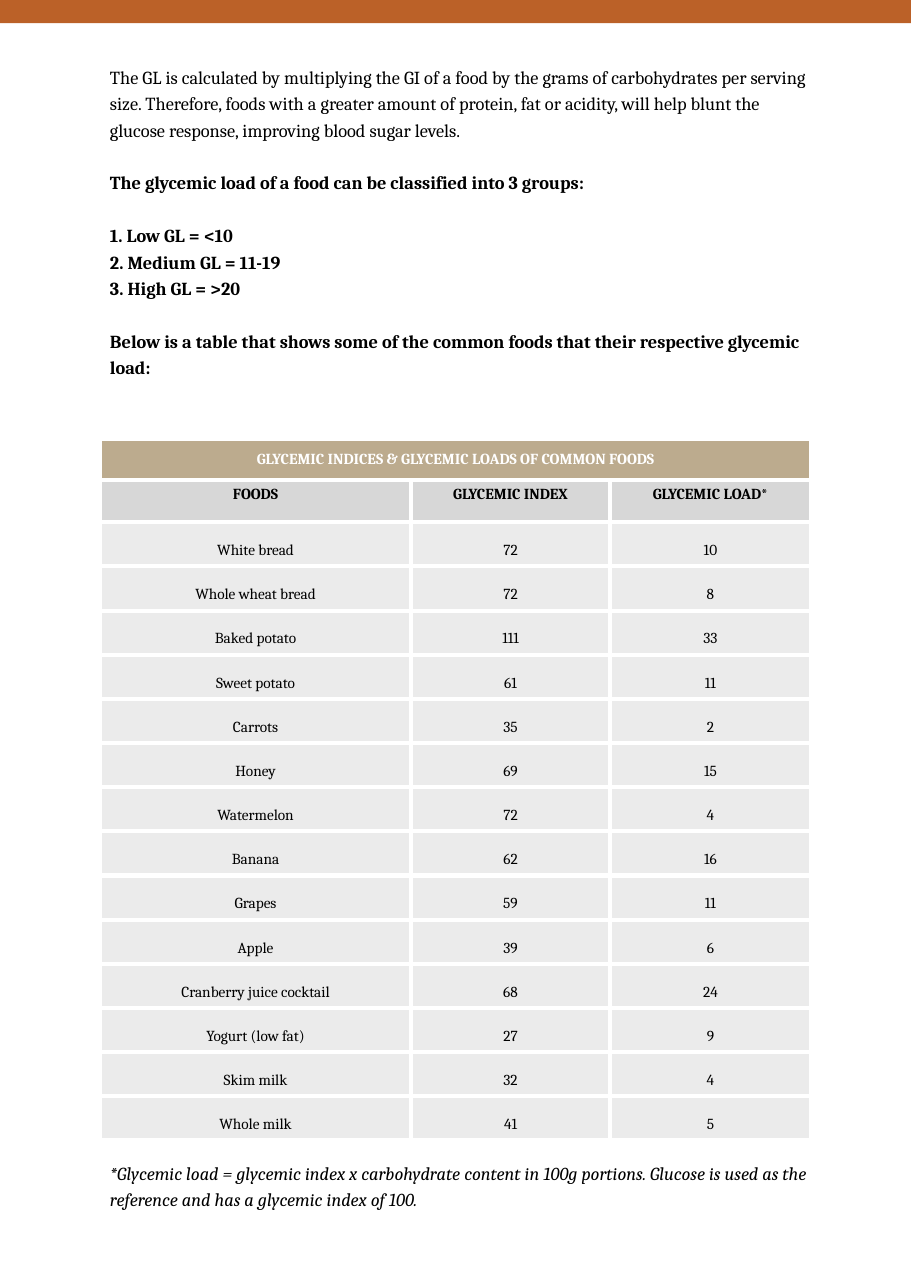
from lxml import etree
from pptx import Presentation
from pptx import util as u
from pptx.dml import color
from pptx.enum import shapes, text
from pptx.oxml import ns

INTRO = [
    ("The GL is calculated by multiplying the GI of a food by the grams of carbohydrates "
     "per serving size. Therefore, foods with a greater amount of protein, fat or acidity, "
     "will help blunt the glucose response, improving blood sugar levels.", False, 0),
    ("The glycemic load of a food can be classified into 3 groups:", True, 17.25),
    ("1. Low GL = <10", True, 17.25),
    ("2. Medium GL = 11-19", True, 0),
    ("3. High GL = >20", True, 0),
    ("Below is a table that shows some of the common foods that their respective "
     "glycemic load:", True, 17.25),
]
FOOTNOTE = ("*Glycemic load = glycemic index x carbohydrate content in 100g portions. "
            "Glucose is used as the reference and has a glycemic index of 100.")
TITLE = "GLYCEMIC INDICES & GLYCEMIC LOADS OF COMMON FOODS"
HEADINGS = ("FOODS", "GLYCEMIC INDEX", "GLYCEMIC LOAD*")
FOODS = [
    ("White bread", 72, 10),
    ("Whole wheat bread", 72, 8),
    ("Baked potato", 111, 33),
    ("Sweet potato", 61, 11),
    ("Carrots", 35, 2),
    ("Honey", 69, 15),
    ("Watermelon", 72, 4),
    ("Banana", 62, 16),
    ("Grapes", 59, 11),
    ("Apple", 39, 6),
    ("Cranberry juice cocktail", 68, 24),
    ("Yogurt (low fat)", 27, 9),
    ("Skim milk", 32, 4),
    ("Whole milk", 41, 5),
]


def rgb(value):
    return color.RGBColor.from_string(value)


class Page:
    """Holds the page style and the slide, and adds each kind of element."""

    font = "Cambria"
    ink = "000000"
    white = "FFFFFF"
    accent = "BB6128"
    title_fill = "BCAB8E"
    heading_fill = "D7D7D7"
    body_fill = "EBEBEB"

    def __init__(self, slide):
        self.slide = slide

    def format_runs(self, paragraph, size, ink, bold=False, italic=False):
        for run in paragraph.runs:
            run.font.name = self.font
            run.font.size = u.Pt(size)
            run.font.bold = bold
            run.font.italic = italic
            run.font.color.rgb = rgb(ink)

    def band(self, left, top, width, height):
        shape = self.slide.shapes.add_shape(
            shapes.MSO_SHAPE.RECTANGLE, *map(u.Inches, (left, top, width, height)))
        shape.shadow.inherit = False
        shape.fill.solid()
        shape.fill.fore_color.rgb = rgb(self.accent)
        shape.line.fill.background()

    def text_box(self, left, top, width, height, paragraphs, italic=False):
        box = self.slide.shapes.add_textbox(*map(u.Inches, (left, top, width, height)))
        frame = box.text_frame
        frame.word_wrap = True
        frame.text = "\n".join(wording for wording, _, _ in paragraphs)
        for paragraph, (_, bold, gap) in zip(frame.paragraphs, paragraphs):
            paragraph.line_spacing = 1.2
            paragraph.space_before = u.Pt(gap)
            self.format_runs(paragraph, 12, self.ink, bold, italic)

    def cell_borders(self, cell):
        properties = cell._tc.get_or_add_tcPr()
        for side in ("a:lnL", "a:lnR", "a:lnT", "a:lnB"):
            line = etree.SubElement(properties, ns.qn(side), w=str(u.Pt(3)))
            fill = etree.SubElement(line, ns.qn("a:solidFill"))
            etree.SubElement(fill, ns.qn("a:srgbClr"), val=self.white)

    def fill_cell(self, cell, wording, fill, ink, bold, spacing):
        self.cell_borders(cell)
        cell.fill.solid()
        cell.fill.fore_color.rgb = rgb(fill)
        cell.text_frame.text = str(wording)
        paragraph = cell.text_frame.paragraphs[0]
        paragraph.alignment = text.PP_ALIGN.CENTER
        paragraph.line_spacing = spacing
        self.format_runs(paragraph, 10, ink, bold)

    def food_table(self, left, top, widths, row_height):
        rows = [(TITLE, "", ""), HEADINGS, *FOODS]
        styles = [(self.title_fill, self.white, True, 1.0),
                  (self.heading_fill, self.ink, True, 1.0)]
        styles += [(self.body_fill, self.ink, False, 1.8)] * len(FOODS)
        table = self.slide.shapes.add_table(
            len(rows), len(widths), u.Inches(left), u.Inches(top),
            u.Inches(sum(widths)), u.Inches(row_height * len(rows))).table
        table.first_row = table.horz_banding = False
        for column, width in zip(table.columns, widths):
            column.width = u.Inches(width)
        for row, values, style in zip(table.rows, rows, styles):
            row.height = u.Inches(row_height)
            for cell, wording in zip(row.cells, values):
                self.fill_cell(cell, wording, *style)
        title = table.cell(0, 0)
        title.merge(table.cell(0, len(widths) - 1))
        title.vertical_anchor = text.MSO_ANCHOR.MIDDLE


def main():
    presentation = Presentation()
    presentation.slide_width = u.Inches(8.27)
    presentation.slide_height = u.Inches(11.69)
    page = Page(presentation.slides.add_slide(presentation.slide_layouts[6]))
    page.band(0, 0, 8.27, 0.21)
    page.text_box(0.9, 0.51, 6.61, 2.75, INTRO)
    page.text_box(0.9, 10.46, 6.61, 0.57, [(FOOTNOTE, False, 0)], italic=True)
    page.food_table(0.91, 3.98, (2.82, 1.81, 1.82), 0.38)
    presentation.save("out.pptx")


if __name__ == "__main__":
    main()
